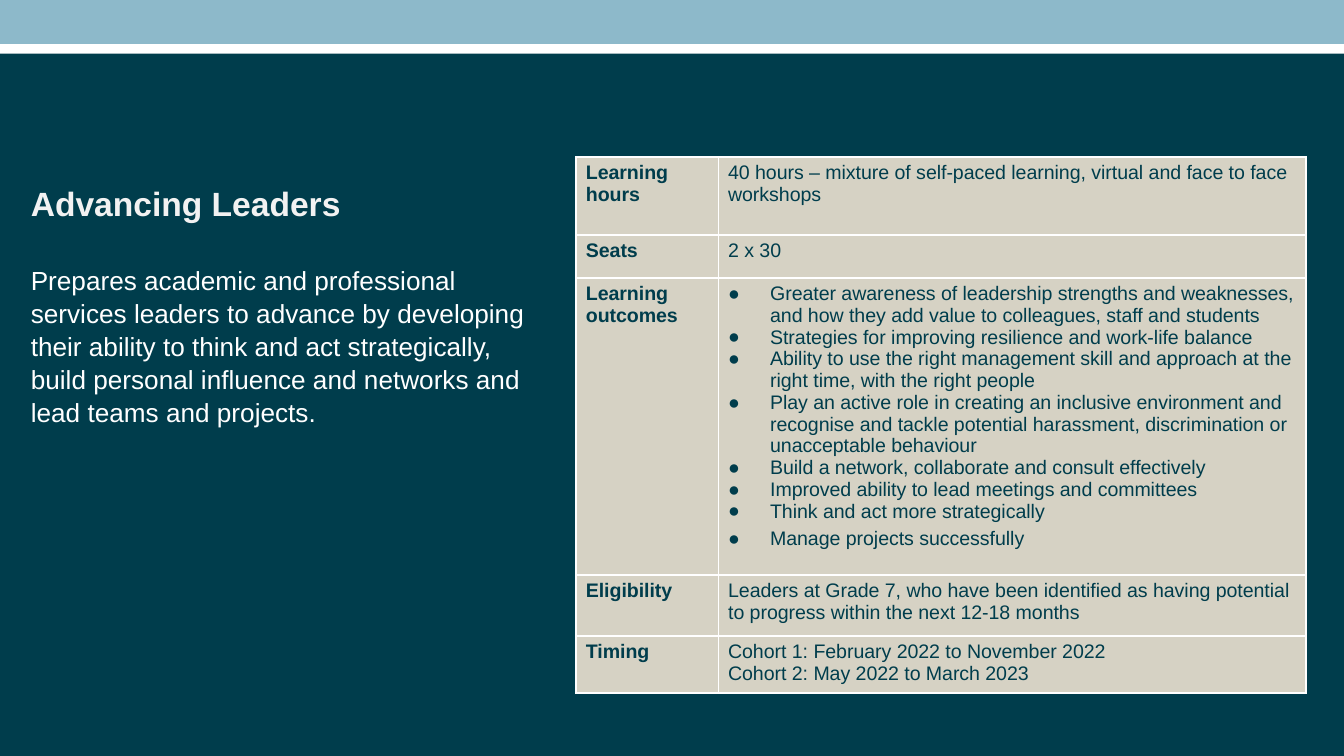
from lxml.etree import SubElement
from pptx import Presentation
from pptx.dml.color import RGBColor
from pptx.enum.shapes import MSO_SHAPE
from pptx.oxml.ns import qn
from pptx.util import Pt

COLORS = {"banner": "8DB9CA", "navy": "003D4C", "cell": "D6D2C4",
          "heading": "F2F2F2", "white": "FFFFFF"}


def rgb(name):
    return RGBColor.from_string(COLORS[name])


def write(tf, text, first=False, size=10.5, color="navy", bold=False,
          bullet=False, before=0, spacing=None):
    p = tf.paragraphs[0] if first else tf.add_paragraph()
    if before:
        p.space_before = Pt(before)
    if spacing:
        p.line_spacing = spacing
    if bullet:
        pPr = p._p.get_or_add_pPr()
        pPr.set("marL", str(Pt(22.5)))
        pPr.set("indent", str(-Pt(22.5)))
        SubElement(pPr, qn("a:buFont"), typeface="Arial")
        SubElement(pPr, qn("a:buChar"), char="●")
    r = p.add_run()
    r.text = text
    r.font.name = "Arial"
    r.font.size = Pt(size)
    r.font.bold = bold
    r.font.color.rgb = rgb(color)


prs = Presentation()
prs.slide_width, prs.slide_height = Pt(720), Pt(405)
s = prs.slides.add_slide(prs.slide_layouts[6])

# Banner and background panel
for top, height, color in [(0, 23.5, "banner"), (28.8, 376.2, "navy")]:
    sp = s.shapes.add_shape(MSO_SHAPE.RECTANGLE, 0, Pt(top), Pt(720), Pt(height))
    sp.shadow.inherit = False
    sp.fill.solid()
    sp.fill.fore_color.rgb = rgb(color)
    sp.line.fill.background()

# Programme summary
tf = s.shapes.add_textbox(Pt(9.4), Pt(93.6), Pt(279.4), Pt(135.4)).text_frame
tf.word_wrap = True
write(tf, "Advancing Leaders", first=True, size=18, color="heading", bold=True,
      spacing=1.05)
write(tf, "Prepares academic and professional services leaders to advance by "
      "developing their ability to think and act strategically, build personal "
      "influence and networks and lead teams and projects.",
      size=14, color="white", before=21, spacing=1.05)

# Programme details: label, row height, paragraphs
rows = [
    ("Learning hours", 41.8, ["40 hours – mixture of self-paced learning, virtual "
                              "and face to face workshops"]),
    ("Seats", 23, ["2 x 30"]),
    ("Learning outcomes", 150, [
        "Greater awareness of leadership strengths and weaknesses, and how they "
        "add value to colleagues, staff and students",
        "Strategies for improving resilience and work-life balance",
        "Ability to use the right management skill and approach at the right time, "
        "with the right people",
        "Play an active role in creating an inclusive environment and recognise "
        "and tackle potential harassment, discrimination or unacceptable behaviour",
        "Build a network, collaborate and consult effectively",
        "Improved ability to lead meetings and committees",
        "Think and act more strategically",
        "Manage projects successfully"]),
    ("Eligibility", 32.7, ["Leaders at Grade 7, who have been identified as having "
                           "potential to progress within the next 12-18 months"]),
    ("Timing", 29, ["Cohort 1: February 2022 to November 2022",
                    "Cohort 2: May 2022 to March 2023"]),
]
table = s.shapes.add_table(len(rows), 2, Pt(308.7), Pt(84.2), Pt(391),
                           Pt(sum(row[1] for row in rows))).table
table.first_row = table.horz_banding = False
table.columns[0].width, table.columns[1].width = Pt(76.2), Pt(314.8)

for i, (label, height, lines) in enumerate(rows):
    table.rows[i].height = Pt(height)
    for j, texts in enumerate([[label], lines]):
        cell = table.cell(i, j)
        cell.margin_left = cell.margin_right = Pt(5.2)
        cell.margin_top = cell.margin_bottom = Pt(2.6)
        tcPr = cell._tc.get_or_add_tcPr()
        for side in ("lnL", "lnR", "lnT", "lnB"):
            ln = SubElement(tcPr, qn(f"a:{side}"), w=str(Pt(1)))
            fill = SubElement(ln, qn("a:solidFill"))
            SubElement(fill, qn("a:srgbClr"), val=COLORS["white"])
        cell.fill.solid()
        cell.fill.fore_color.rgb = rgb("cell")
        bullet = label == "Learning outcomes" and j == 1
        for k, text in enumerate(texts):
            last_bullet = bullet and k == len(texts) - 1
            write(cell.text_frame, text, first=k == 0, bold=j == 0,
                  bullet=bullet, before=3 if last_bullet else 0)

prs.save("out.pptx")
